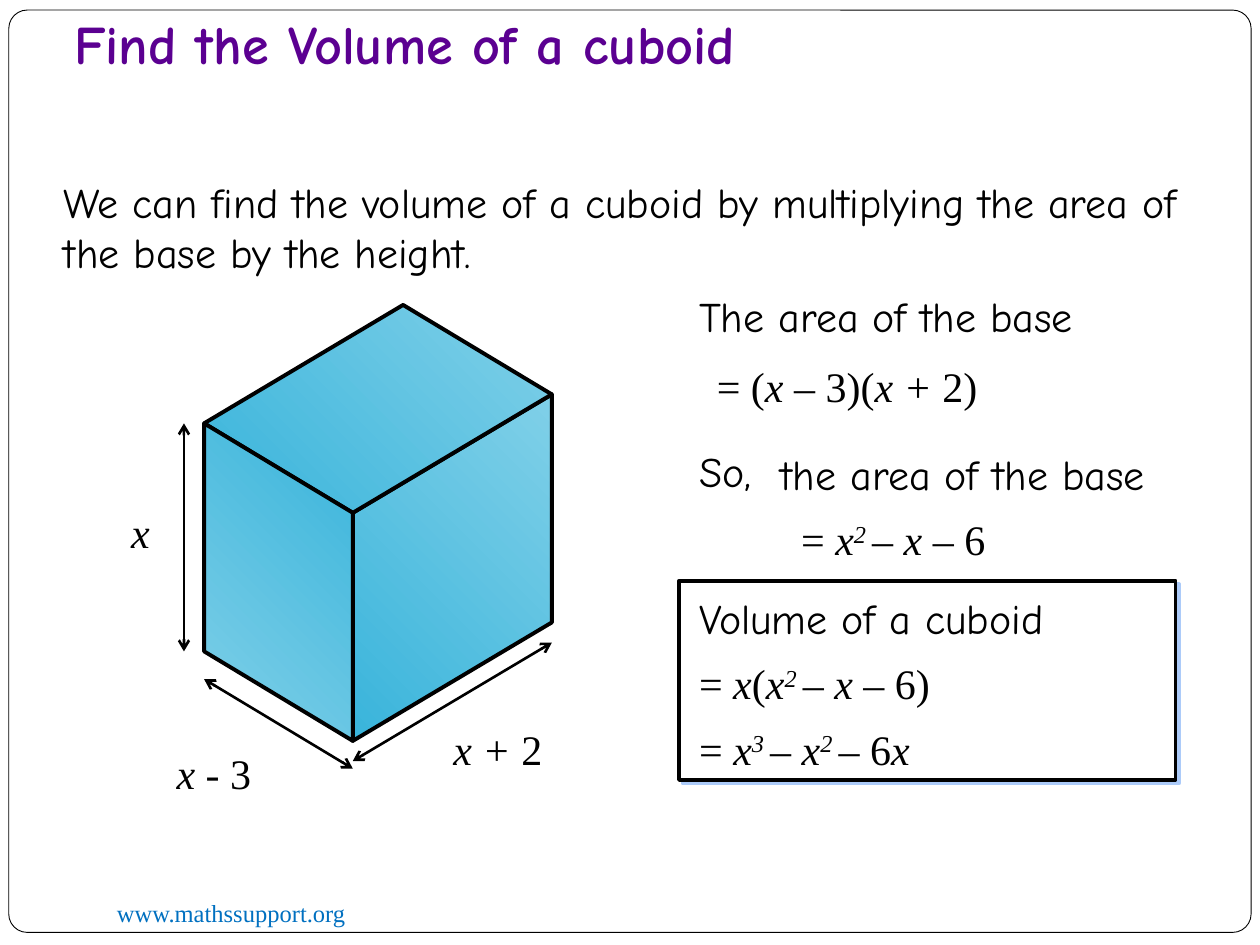
from typing import NamedTuple

from lxml.etree import SubElement
from pptx import Presentation
from pptx.dml.color import RGBColor
from pptx.enum.shapes import MSO_CONNECTOR, MSO_SHAPE
from pptx.enum.text import MSO_ANCHOR, MSO_AUTO_SIZE
from pptx.oxml.ns import qn
from pptx.util import Inches, Pt

COLORS = {
    "white": "FFFFFF", "black": "000000", "title": "5B0091", "link": "0070C0",
    "deep": "39B4DB", "pale": "80D0E8", "shadow": "ACCBF9",
}
COMIC, TIMES = "Comic Neue", "Times New Roman"

# The slide is a grid of 100 columns by 75 rows
COLUMNS, ROWS = 100, 75
SLIDE_WIDTH, SLIDE_HEIGHT = Inches(10), Inches(7.5)


class Point(NamedTuple):
    column: float
    row: float

    def plus(self, *steps: "Point") -> "Point":
        return Point(self.column + sum(step.column for step in steps),
                     self.row + sum(step.row for step in steps))


class Box(NamedTuple):
    column: float
    row: float
    columns: float
    rows: float


class Label(NamedTuple):
    box: Box
    runs: list  # (text, style) pairs: i = italic, s = superscript
    font: str = TIMES
    size: float = 24
    color: str = "black"
    wrap: bool = False


class Face(NamedTuple):
    corners: list
    start: str
    end: str


def across(columns: float) -> int:
    return round(SLIDE_WIDTH * columns / COLUMNS)


def down(rows: float) -> int:
    return round(SLIDE_HEIGHT * rows / ROWS)


def place(box: Box) -> tuple:
    return across(box.column), down(box.row), across(box.columns), down(box.rows)


def rgb(name: str) -> RGBColor:
    return RGBColor.from_string(COLORS[name])


def outline(shape, width: float) -> None:
    shape.line.color.rgb = rgb("black")
    shape.line.width = Pt(width)


def add_panel(slide, kind, box: Box, line_width: float):
    shape = slide.shapes.add_shape(kind, *place(box))
    shape.shadow.inherit = False
    shape.fill.solid()
    shape.fill.fore_color.rgb = rgb("white")
    outline(shape, line_width)
    return shape


def add_offset_shadow(shape) -> None:
    effects = shape._element.spPr.find(qn("a:effectLst"))
    shadow = SubElement(effects, qn("a:outerShdw"), dist=str(Pt(2.8)),
                        dir=str(45 * 60000), algn="ctr", rotWithShape="0")
    SubElement(shadow, qn("a:srgbClr"), val=COLORS["shadow"])


def add_label(slide, label: Label):
    text_box = slide.shapes.add_textbox(*place(label.box))
    frame = text_box.text_frame
    frame.word_wrap = label.wrap
    frame.auto_size = MSO_AUTO_SIZE.SHAPE_TO_FIT_TEXT
    paragraph = frame.paragraphs[0]
    paragraph.font.name = label.font
    paragraph.font.size = Pt(label.size)
    paragraph.font.color.rgb = rgb(label.color)
    for text, style in label.runs:
        run = paragraph.add_run()
        run.text = text
        if "i" in style:
            run.font.italic = True
        if "s" in style:
            run.font._element.set("baseline", "30000")
    return text_box


def add_face(slide, face: Face) -> None:
    first, *others = [(across(corner.column), down(corner.row)) for corner in face.corners]
    builder = slide.shapes.build_freeform(*first, scale=1.0)
    builder.add_line_segments(others, close=True)
    shape = builder.convert_to_shape()
    shape.shadow.inherit = False
    shape.fill.gradient()
    shape.fill.gradient_angle = 45
    for stop, color in zip(shape.fill.gradient_stops, (face.start, face.end)):
        stop.color.rgb = rgb(color)
    outline(shape, 2.25)


def add_dimension(slide, start: Point, end: Point) -> None:
    connector = slide.shapes.add_connector(
        MSO_CONNECTOR.STRAIGHT, across(start.column), down(start.row),
        across(end.column), down(end.row))
    outline(connector, 1.5)
    line = connector.line._get_or_add_ln()
    for tag in ("a:headEnd", "a:tailEnd"):
        SubElement(line, qn(tag), type="arrow")
    SubElement(connector._element.spPr, qn("a:effectLst"))


def add_cuboid(slide) -> None:
    bottom = Point(28, 58.8)
    left, right, up = Point(-11.8, -7.1), Point(15.8, -9.4), Point(0, -18.1)
    top = bottom.plus(up)
    faces = [
        Face([top.plus(right), top, bottom, bottom.plus(right)], "deep", "pale"),
        Face([top.plus(left, right), top.plus(left), top, top.plus(right)], "deep", "pale"),
        Face([top.plus(left), bottom.plus(left), bottom, top], "pale", "deep"),
    ]
    for face in faces:
        add_face(slide, face)

    # Dimension arrows run parallel to the three visible edges
    for edge, gap in ((left, Point(0, 2.2)), (right, Point(0, 1.6))):
        add_dimension(slide, bottom.plus(edge, gap), bottom.plus(gap))
    side = bottom.plus(left, Point(-1.6, 0))
    add_dimension(slide, side.plus(up), side)


SQUARED = [("x", "i"), ("2 ", "is")]
MINUS_X_MINUS_6 = [("– ", ""), ("x ", "i"), ("– 6", "")]

LABELS = [
    Label(Box(8.3, 70.8, 32.5, 3.4), [("www.mathssupport.org", "")],
          size=14, color="link", wrap=True),
    Label(Box(4.1, 13.5, 92.3, 9.1),
          [("We can find the volume of a cuboid by multiplying the area of "
            "the base by the height.", "")], COMIC, wrap=True),
    # Edge lengths
    Label(Box(8.6, 39.7, 4.4, 5), [(" x", "i")]),
    Label(Box(35, 56.9, 9.7, 5), [("x +", "i"), (" 2", "")]),
    Label(Box(12.2, 58.8, 9.6, 5), [(" x ", "i"), ("- 3", "")]),
    # Area of the base
    Label(Box(54.5, 22.6, 36, 5), [("The area of the base", "")], COMIC),
    Label(Box(55.9, 28.1, 24.2, 5),
          [("= (", ""), ("x ", "i"), ("– 3)(", ""), ("x +", "i"), (" 2)", "")]),
    Label(Box(54.5, 34.9, 7, 5), [("So,", "")], COMIC),
    Label(Box(61, 35.1, 35.3, 5), [("the area of the base", "")], COMIC),
    Label(Box(62.6, 40.3, 18.1, 5), [("= ", ""), *SQUARED, *MINUS_X_MINUS_6]),
    # Volume
    Label(Box(54.5, 46.5, 31.5, 5.1), [("Volume of a cuboid", "")], COMIC),
    Label(Box(54.5, 51.7, 21.4, 5.1),
          [("= ", ""), ("x", "i"), ("(", ""), *SQUARED, *MINUS_X_MINUS_6, (")", "")]),
    Label(Box(54.5, 56.9, 20.2, 5.1),
          [("= ", ""), ("x", "i"), ("3 ", "is"), ("– ", ""), *SQUARED,
           ("– 6", ""), ("x", "i")]),
]
TITLE = Label(Box(5.9, 0, 90, 6), [("Find the Volume of a cuboid", "")],
              COMIC, 31, "title", True)


def add_title(slide) -> None:
    frame = add_label(slide, TITLE).text_frame
    frame.auto_size = MSO_AUTO_SIZE.NONE
    frame.vertical_anchor = MSO_ANCHOR.BOTTOM
    frame.margin_left = frame.margin_right = frame.margin_bottom = 0
    frame.margin_top = Inches(0.05)
    frame.paragraphs[0].font.bold = True


def main() -> None:
    presentation = Presentation()
    presentation.slide_width, presentation.slide_height = SLIDE_WIDTH, SLIDE_HEIGHT
    slide = presentation.slides.add_slide(presentation.slide_layouts[6])

    # Page frame, title and cuboid
    frame = add_panel(slide, MSO_SHAPE.ROUNDED_RECTANGLE, Box(0.7, 0.8, 98.6, 73.2), 0.5)
    frame.adjustments[0] = 0.02
    add_title(slide)
    add_cuboid(slide)

    # Result panel, then all the wording
    result = add_panel(slide, MSO_SHAPE.RECTANGLE, Box(53.9, 46.1, 39.4, 15.8), 2.25)
    add_offset_shadow(result)
    for label in LABELS:
        add_label(slide, label)

    presentation.save("out.pptx")


if __name__ == "__main__":
    main()
